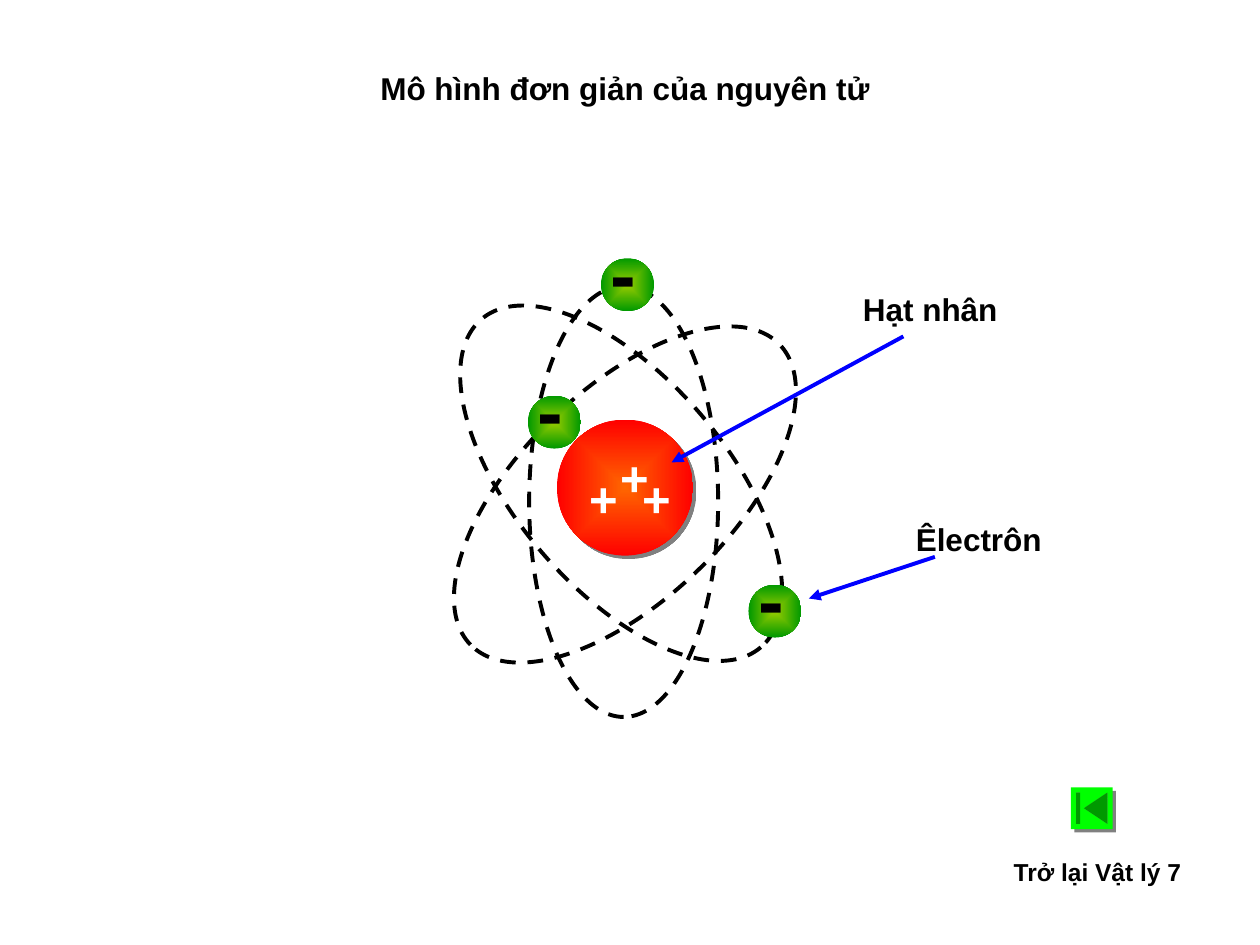
from lxml import etree
from pptx import Presentation
from pptx.dml.color import RGBColor
from pptx.enum.dml import MSO_LINE
from pptx.enum.shapes import MSO_CONNECTOR, MSO_SHAPE
from pptx.enum.text import MSO_AUTO_SIZE, PP_ALIGN
from pptx.oxml import parse_xml
from pptx.oxml.ns import nsdecls, qn
from pptx.util import Inches, Pt

BLACK = RGBColor(0x00, 0x00, 0x00)
WHITE = RGBColor(0xFF, 0xFF, 0xFF)
BLUE = RGBColor(0x00, 0x00, 0xFF)
LIME = RGBColor(0x00, 0xFF, 0x00)
ORANGE = RGBColor(0xFF, 0x66, 0x00)
RED = RGBColor(0xFF, 0x00, 0x00)
OLIVE = RGBColor(0x99, 0xCC, 0x00)
GREEN = RGBColor(0x00, 0x99, 0x00)


def add_text(shapes, text, x, y, w, h, size, color=BLACK, align=PP_ALIGN.LEFT):
    tb = shapes.add_textbox(Inches(x), Inches(y), Inches(w), Inches(h))
    tf = tb.text_frame
    tf.word_wrap = True
    tf.auto_size = MSO_AUTO_SIZE.SHAPE_TO_FIT_TEXT
    tf.text = text
    p = tf.paragraphs[0]
    p.alignment = align
    font = p.runs[0].font
    font.name, font.size, font.bold = "Arial", Pt(size), True
    font.color.rgb = color


def add_ball(shapes, x, y, d, inner, outer):
    """Circle with a gradient running from its centre to its rim."""
    sp = shapes.add_shape(MSO_SHAPE.OVAL, Inches(x), Inches(y), Inches(d), Inches(d))
    sp.shadow.inherit = False
    sp.line.fill.background()
    sp.fill.gradient()
    for stop, color in zip(sp.fill.gradient_stops, (inner, outer)):
        stop.color.rgb = color
    grad = sp.element.spPr.find(qn("a:gradFill"))
    grad.remove(grad.find(qn("a:lin")))
    grad.append(parse_xml(
        f'<a:path {nsdecls("a")} path="shape">'
        '<a:fillToRect l="50000" t="50000" r="50000" b="50000"/></a:path>'))
    return sp


prs = Presentation()
prs.slide_width, prs.slide_height = Inches(10), Inches(7.5)
s = prs.slides.add_slide(prs.slide_layouts[6])

# Title
add_text(s.shapes, "Mô hình đơn giản của nguyên tử", 2.92, 0.5, 4.42, 0.4, 18)

# Nucleus
nucleus = add_ball(s.shapes, 4.42, 3.33, 1.08, ORANGE, RED)

# Orbits
for x, y, h, angle in [(3.25, 3.09, 1.67, 315.8), (3.22, 3, 1.67, 229.6),
                       (3.24, 3.23, 1.5, 270)]:
    sp = s.shapes.add_shape(MSO_SHAPE.OVAL, Inches(x), Inches(y), Inches(3.42), Inches(h))
    sp.rotation = angle
    sp.shadow.inherit = False
    sp.fill.background()
    sp.line.color.rgb = BLACK
    sp.line.width = Pt(2.25)
    sp.line.dash_style = MSO_LINE.DASH

# Positive charges in the nucleus
for x, y in [(4.83, 3.5), (5, 3.67), (4.58, 3.67)]:
    add_text(s.shapes, "+", x, y, 0.5, 0.57, 28, WHITE)

# Electrons, each a ball grouped with its minus sign
for x, y in [(4.19, 3.14), (5.94, 4.64), (4.77, 2.05)]:
    electron = s.shapes.add_group_shape()
    add_ball(electron.shapes, x, y, 0.42, OLIVE, GREEN)
    add_text(electron.shapes, "-", x - 0.02, y - 0.31, 0.27, 0.83, 44)

# Labels and their arrows
for text, x, y, w, start, end in [
        ("Hạt nhân", 6.75, 2.25, 1.5, (7.17, 2.67), (5.33, 3.67)),
        ("Êlectrôn", 7.17, 4.08, 1.67, (7.42, 4.42), (6.42, 4.75))]:
    add_text(s.shapes, text, x, y, w, 0.4, 18)
    arrow = s.shapes.add_connector(
        MSO_CONNECTOR.STRAIGHT, *(Inches(v) for v in start + end))
    arrow.line.color.rgb = BLUE
    arrow.line.width = Pt(2.25)
    etree.SubElement(arrow.line._get_or_add_ln(), qn("a:tailEnd"), type="triangle")
    etree.SubElement(arrow.element.spPr, qn("a:effectLst"))

# Back button and caption
button = s.shapes.add_shape(MSO_SHAPE.ACTION_BUTTON_BEGINNING, Inches(8.5), Inches(6.25),
                            Inches(0.33), Inches(0.33))
button.shadow.inherit = False
button.fill.solid()
button.fill.fore_color.rgb = LIME
button.line.fill.background()
add_text(s.shapes, "Trở lại Vật lý 7", 7.92, 6.75, 1.58, 0.33, 14, align=PP_ALIGN.CENTER)

# Hard grey shadows
for sp in (nucleus, button):
    sp.element.spPr.find(qn("a:effectLst")).append(parse_xml(
        f'<a:outerShdw {nsdecls("a")} dist="{Pt(2.8)}" dir="2700000" algn="ctr" '
        'rotWithShape="0"><a:srgbClr val="808080"/></a:outerShdw>'))

prs.save("out.pptx")
